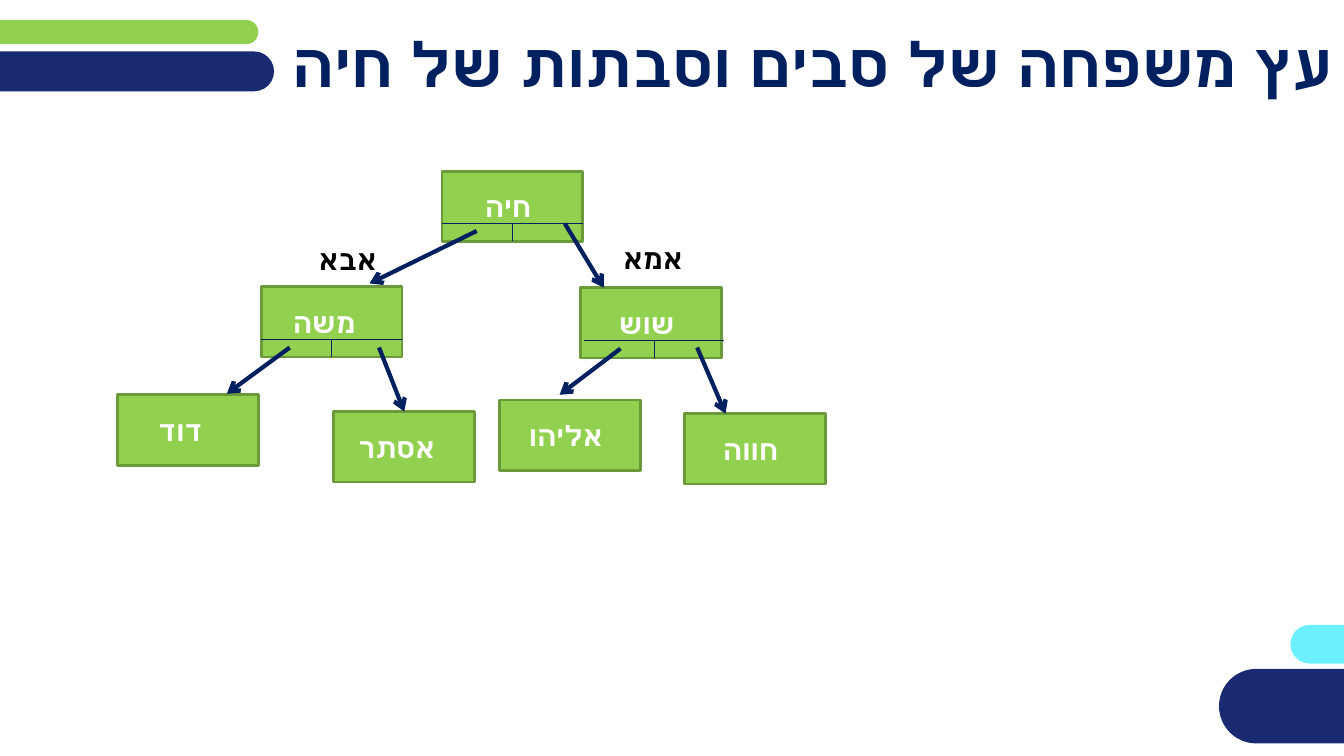
from lxml.etree import SubElement
from pptx import Presentation
from pptx.dml.color import RGBColor
from pptx.enum.shapes import MSO_CONNECTOR, MSO_SHAPE
from pptx.enum.text import MSO_ANCHOR, MSO_AUTO_SIZE, PP_ALIGN
from pptx.oxml.ns import qn
from pptx.util import Pt

PX = 9525
FONT = "Quicksand"
NAVY = RGBColor(0x00, 0x20, 0x60)
BAR_NAVY = RGBColor(0x19, 0x2A, 0x72)
GREEN = RGBColor(0x92, 0xD0, 0x50)
DARK_GREEN = RGBColor(0x6C, 0x9A, 0x3B)
CYAN = RGBColor(0x6C, 0xF0, 0xFF)
WHITE = RGBColor(0xFF, 0xFF, 0xFF)
BLACK = RGBColor(0x00, 0x00, 0x00)

BOX_WIDTH, BOX_HEIGHT = 134, 67
DIVIDER_TOP = 50

BARS = [
    (1229, 595, 129, 37, CYAN),
    (-27, 19, 273, 23, GREEN),
    (-51, 49, 312, 38, BAR_NAVY),
    (1161, 637, 204, 71, BAR_NAVY),
]
# name: left, top, leftward nudge of the text
PEOPLE = {
    "חיה": (421, 163, 4),
    "שוש": (553, 274, 4),
    "משה": (249, 273, 7),
    "אליהו": (476, 381, 4),
    "חווה": (652, 394, 4),
    "אסתר": (318, 392, 7),
    "דוד": (112, 376, 7),
}
# parent box: rightward shift of its divider lines
DIVIDERS = {"חיה": 0, "שוש": 3, "משה": 0}
ARROWS = [
    ((538, 213), (575, 274)),
    ((454, 220), (352, 270)),
    ((276, 331), (216, 375)),
    ((591, 332), (533, 376)),
    ((664, 331), (691, 394)),
]
LABELS = [("אמא", 584, 225, 137), ("אבא", 294, 226, 97)]


def px(*lengths):
    return [length * PX for length in lengths]


def write_text(frame, text, size, color, alignment):
    frame.text = text
    paragraph = frame.paragraphs[0]
    paragraph.alignment = alignment
    font = paragraph.font
    font.size, font.bold, font.name = Pt(size), True, FONT
    font.color.rgb = color
    # Hebrew letters take the complex-script font
    defaults = paragraph._p.pPr.find(qn("a:defRPr"))
    SubElement(defaults, qn("a:cs")).set("typeface", FONT)


def add_title(slide, text):
    title = slide.shapes.title
    title.left, title.top, title.width, title.height = px(268, 22, 1012, 76)
    frame = title.text_frame
    frame.auto_size = MSO_AUTO_SIZE.NONE
    frame.vertical_anchor = MSO_ANCHOR.MIDDLE
    write_text(frame, text, 44, NAVY, PP_ALIGN.CENTER)


def add_bar(slide, left, top, width, height, color):
    bar = slide.shapes.add_shape(MSO_SHAPE.ROUNDED_RECTANGLE, *px(left, top, width, height))
    bar.adjustments[0] = 0.5
    bar.shadow.inherit = False
    bar.fill.solid()
    bar.fill.fore_color.rgb = color
    bar.line.fill.background()


def add_person(slide, name, left, top, nudge):
    box = slide.shapes.add_shape(MSO_SHAPE.RECTANGLE, *px(left, top, BOX_WIDTH, BOX_HEIGHT))
    box.shadow.inherit = False
    box.fill.solid()
    box.fill.fore_color.rgb = GREEN
    box.line.color.rgb = DARK_GREEN
    box.line.width = Pt(2)
    frame = box.text_frame
    frame.vertical_anchor = MSO_ANCHOR.MIDDLE
    frame.margin_right = frame.margin_left + 2 * nudge * PX
    write_text(frame, name, 20, WHITE, PP_ALIGN.CENTER)
    return box


def add_line(slide, start, end, width):
    line = slide.shapes.add_connector(MSO_CONNECTOR.STRAIGHT, *px(*start, *end))
    line.line.color.rgb = NAVY
    line.line.width = Pt(width)
    SubElement(line._element.spPr, qn("a:effectLst"))
    return line


def add_arrow(slide, start, end):
    arrow = add_line(slide, start, end, 3)
    SubElement(arrow.line._get_or_add_ln(), qn("a:tailEnd")).set("type", "arrow")
    return arrow


def add_dividers(slide, box, left, top, shift):
    """Split the foot of a parent's box into two cells."""
    left += shift
    middle, divider = left + BOX_WIDTH // 2, top + DIVIDER_TOP
    add_line(slide, (left, divider), (left + BOX_WIDTH, divider), 0.75)
    upright = add_line(slide, (middle, divider), (middle, top + BOX_HEIGHT), 0.75)
    if not shift:
        upright.end_connect(box, 2)


def add_label(slide, text, left, top, width):
    label = slide.shapes.add_textbox(*px(left, top, width, 42))
    label.text_frame.word_wrap = True
    write_text(label.text_frame, text, 20, BLACK, PP_ALIGN.LEFT)


def main():
    presentation = Presentation()
    presentation.slide_width, presentation.slide_height = px(1280, 720)
    slide = presentation.slides.add_slide(presentation.slide_layouts[5])
    for bar in BARS:
        add_bar(slide, *bar)
    add_title(slide, "עץ משפחה של סבים וסבתות של חיה")

    boxes = {name: add_person(slide, name, *place) for name, place in PEOPLE.items()}
    for name, shift in DIVIDERS.items():
        left, top, _ = PEOPLE[name]
        add_dividers(slide, boxes[name], left, top, shift)
    for start, end in ARROWS:
        add_arrow(slide, start, end)
    add_arrow(slide, (361, 331), (385, 392)).end_connect(boxes["אסתר"], 0)
    for label in LABELS:
        add_label(slide, *label)
    presentation.save("out.pptx")


if __name__ == "__main__":
    main()
